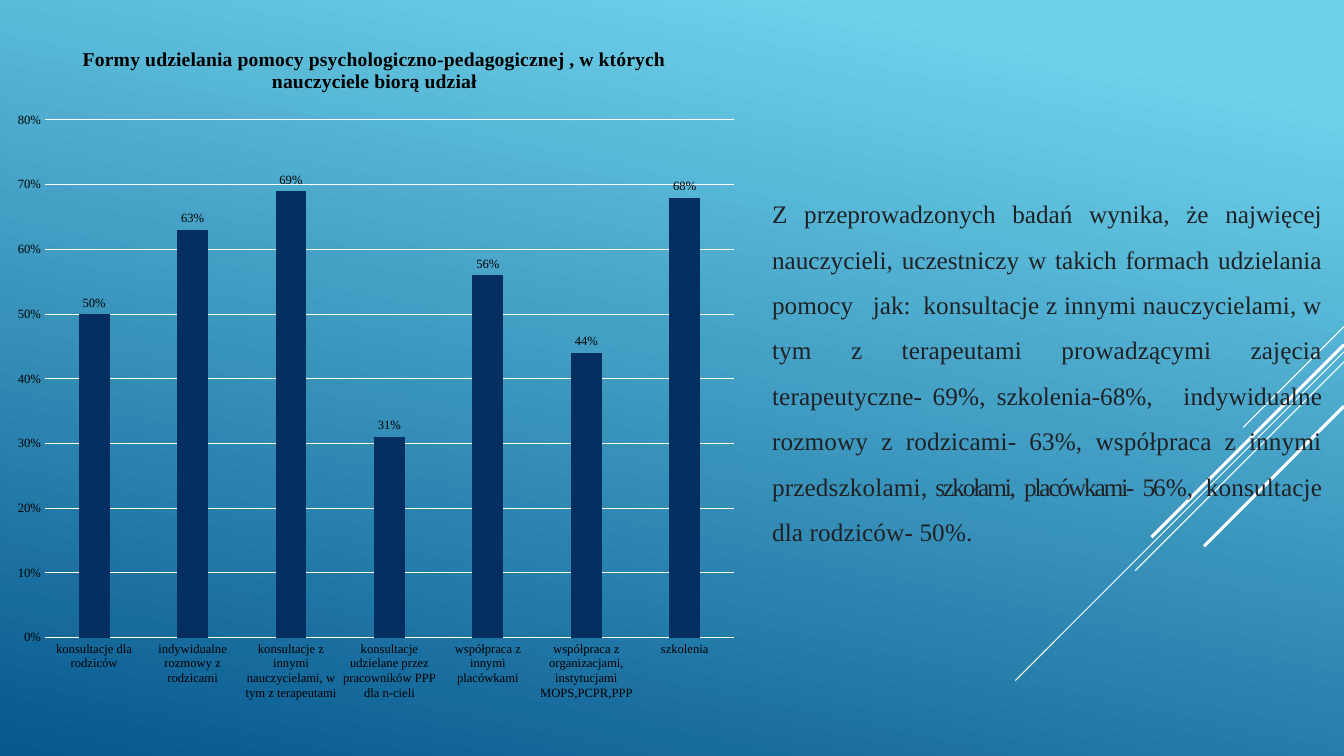
import pptx
import pptx.chart.data
import pptx.dml.color
import pptx.enum.chart
import pptx.enum.shapes
import pptx.enum.text
import pptx.oxml
import pptx.oxml.ns
import pptx.util
from dataclasses import dataclass
from lxml import etree

Pt = pptx.util.Pt
qn = pptx.oxml.ns.qn
CHART_ENUM = pptx.enum.chart
WIDTH, HEIGHT = 960, 540


@dataclass(frozen=True)
class Theme:
    font: str = "Times New Roman"
    sky: str = "6ED2EB"
    deep: str = "06588E"
    bar: str = "052F61"
    white: str = "FFFFFF"
    black: str = "000000"
    text: str = "202124"
    body_size: float = 18
    title_size: float = 14
    label_size: float = 9


FORMS = [
    ("konsultacje dla rodziców", 0.50),
    ("indywidualne rozmowy z rodzicami", 0.63),
    ("konsultacje z innymi nauczycielami, w tym z terapeutami", 0.69),
    ("konsultacje udzielane przez pracowników PPP dla n-cieli", 0.31),
    ("współpraca z innymi placówkami", 0.56),
    ("współpraca z organizacjami, instytucjami MOPS,PCPR,PPP", 0.44),
    ("szkolenia", 0.68),
]
CHART_TITLE = ("Formy udzielania pomocy psychologiczno-pedagogicznej , "
               "w których nauczyciele biorą udział")

# Text and letter spacing in points
FINDINGS = [
    ("Z przeprowadzonych badań wynika, że najwięcej nauczycieli, uczestniczy "
     "w takich formach udzielania pomocy\tjak:\t", 0),
    ("konsultacje z innymi nauczycielami, w tym z terapeutami prowadzącymi "
     "zajęcia terapeutyczne- 69%, ", 0.1),
    ("szkolenia-68%,\t", 0),
    ("indywidualne rozmowy z rodzicami- 63%, współpraca z innymi "
     "przedszkolami", 0.1),
    (", szkołami, placówkami- 56", -1.5),
    ("%, konsultacje dla rodziców- 50%.", 0.1),
]
TAB_STOPS = (72.7, 108.5, 294.5)

# Height at the right edge, horizontal reach, line width
RAYS = [
    (233.3, 72, 0.75),
    (251.3, 234.7, 0.75),
    (258.5, 149.2, 0.75),
    (246.2, 137.5, 2.25),
    (290.2, 100, 2.25),
]


def rgb(value):
    return pptx.dml.color.RGBColor.from_string(value)


class SlideBuilder:
    def __init__(self, prs, theme):
        self.theme = theme
        self.s = prs.slides.add_slide(prs.slide_layouts[1])
        title = self.s.shapes.title.element
        title.getparent().remove(title)

    def style(self, font, size, color, bold=False):
        font.name = self.theme.font
        font.size = Pt(size)
        font.bold = bold
        font.color.rgb = rgb(color)

    def background(self):
        fill = self.s.background.fill
        fill.gradient()
        fill.gradient_angle = 258
        stops = ((0.1, self.theme.sky), (1, self.theme.deep))
        for stop, (position, color) in zip(fill.gradient_stops, stops):
            stop.position = position
            stop.color.rgb = rgb(color)

    def ray(self, y, reach, width):
        """Draw a 45-degree line down and left from the right edge."""
        line = self.s.shapes.add_connector(
            pptx.enum.shapes.MSO_CONNECTOR.STRAIGHT,
            Pt(WIDTH), Pt(y), Pt(WIDTH - reach), Pt(y + reach))
        line.line.color.rgb = rgb(self.theme.white)
        line.line.width = Pt(width)
        etree.SubElement(line.element.spPr, qn("a:effectLst"))

    def body(self, x, y, w, h, runs, tab_stops):
        sp = self.s.placeholders[1]
        sp.left, sp.top, sp.width, sp.height = Pt(x), Pt(y), Pt(w), Pt(h)
        self.s.shapes.element.append(sp.element)  # in front of the rays
        tf = sp.text_frame
        tf.word_wrap = True
        tf.auto_size = pptx.enum.text.MSO_AUTO_SIZE.NONE
        tf.vertical_anchor = pptx.enum.text.MSO_ANCHOR.MIDDLE
        tf.margin_bottom = Pt(20)
        p = tf.paragraphs[0]
        p.alignment = pptx.enum.text.PP_ALIGN.JUSTIFY
        p.line_spacing = 1.5
        p.space_before, p.space_after = Pt(3.6), Pt(6)
        pPr = p._p.get_or_add_pPr()
        pPr.set("marL", "0")
        pPr.set("indent", "0")
        etree.SubElement(pPr, qn("a:buNone"))
        tabs = etree.SubElement(pPr, qn("a:tabLst"))
        for stop in tab_stops:
            etree.SubElement(tabs, qn("a:tab"), pos=str(Pt(stop)), algn="l")
        for text, spacing in runs:
            r = p.add_run()
            r.text = text
            self.style(r.font, self.theme.body_size, self.theme.text)
            r.font._element.set("spc", str(round(spacing * 100)))

    def column_chart(self, x, y, w, h, title, rows, plot_area):
        t = self.theme
        data = pptx.chart.data.CategoryChartData(number_format="0%")
        data.categories = [name for name, _ in rows]
        data.add_series("Series 1", [value for _, value in rows])
        chart = self.s.shapes.add_chart(
            CHART_ENUM.XL_CHART_TYPE.COLUMN_CLUSTERED,
            Pt(x), Pt(y), Pt(w), Pt(h), data).chart
        chart.has_legend = False
        self.style(chart.font, t.label_size, t.black)
        chart.has_title = True
        tf = chart.chart_title.text_frame
        tf.text = title
        self.style(tf.paragraphs[0].runs[0].font, t.title_size, t.black, True)

        plot = chart.plots[0]
        plot.gap_width, plot.overlap = 219, -27
        plot.vary_by_categories = False
        fill = plot.series[0].format.fill
        fill.solid()
        fill.fore_color.rgb = rgb(t.bar)
        plot.has_data_labels = True
        labels = plot.data_labels
        labels.show_value = True
        labels.number_format, labels.number_format_is_linked = "0%", False
        labels.position = CHART_ENUM.XL_LABEL_POSITION.OUTSIDE_END
        self.style(labels.font, t.label_size, t.black)

        values, cats = chart.value_axis, chart.category_axis
        values.minimum_scale, values.maximum_scale = 0, 0.8
        values.major_unit = 0.1
        values.tick_labels.number_format = "0%"
        values.tick_labels.number_format_is_linked = False
        values.format.line.fill.background()
        for axis in (values, cats):
            axis.major_tick_mark = CHART_ENUM.XL_TICK_MARK.NONE
            self.style(axis.tick_labels.font, t.label_size, t.black)
        for line in (values.major_gridlines.format.line, cats.format.line):
            line.color.rgb = rgb(t.white)
            line.width = Pt(0.75)
        self.place_plot(chart, plot_area)

    def place_plot(self, chart, plot_area):
        """Fix the inner plot area, given as fractions of the chart."""
        area = chart._chartSpace.chart.plotArea
        for old in area.findall(qn("c:layout")):
            area.remove(old)
        layout = etree.Element(qn("c:layout"))
        area.insert(0, layout)
        manual = etree.SubElement(layout, qn("c:manualLayout"))
        settings = [("layoutTarget", "inner"), ("xMode", "edge"),
                    ("yMode", "edge"), *zip("xywh", plot_area)]
        for name, value in settings:
            etree.SubElement(manual, qn("c:" + name), val=str(value))


def main():
    prs = pptx.Presentation()
    prs.slide_width, prs.slide_height = Pt(WIDTH), Pt(HEIGHT)
    slide = SlideBuilder(prs, Theme())
    slide.background()
    for ray in RAYS:
        slide.ray(*ray)
    slide.body(544.3, 27.4, 407.5, 483, FINDINGS, TAB_STOPS)
    slide.column_chart(0, 16.6, 535, 493.2, CHART_TITLE, FORMS,
                       (0.06, 0.14, 0.92, 0.75))
    prs.save("out.pptx")


if __name__ == "__main__":
    main()
